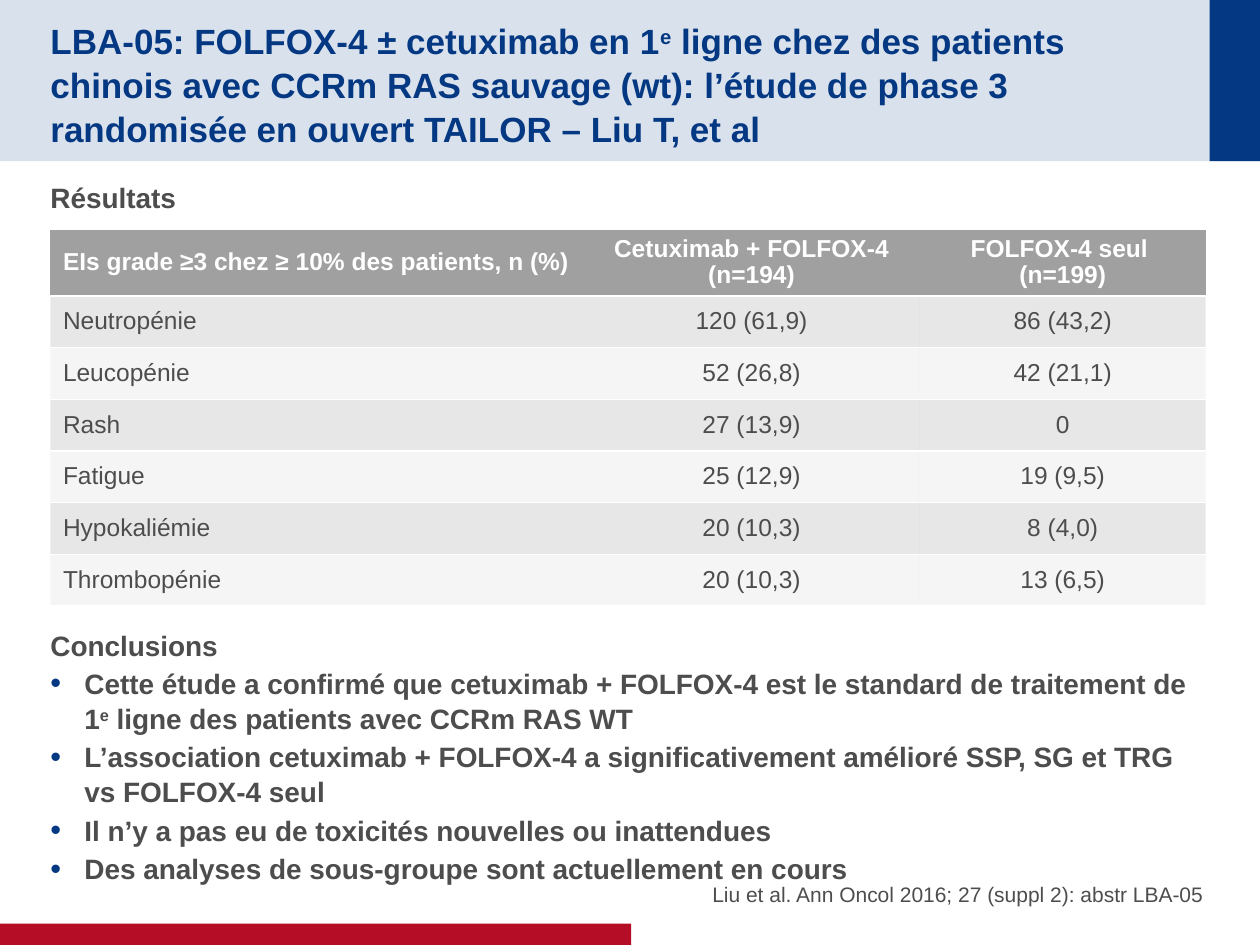
from lxml.etree import SubElement
from pptx import Presentation
from pptx.dml.color import RGBColor
from pptx.enum.shapes import MSO_SHAPE
from pptx.enum.text import MSO_ANCHOR, MSO_AUTO_SIZE, PP_ALIGN
from pptx.oxml import parse_xml
from pptx.oxml.ns import nsdecls, qn
from pptx.util import Inches, Pt

NAVY = RGBColor(0x04, 0x38, 0x82)
RED = RGBColor(0xB6, 0x0D, 0x27)
GREY = RGBColor(0x4D, 0x4D, 0x4D)
TABLE_GREY = RGBColor(0xA0, 0xA0, 0xA0)
WHITE = RGBColor(0xFF, 0xFF, 0xFF)

WIDTH, HEIGHT = 10, 7.5
MARGIN = 0.4
BAND_HEIGHT = 1.28
FOOT_HEIGHT = 0.17
INDENT = 0.27
COLUMNS = (4.23, 2.67, 2.27)
HEADER_HEIGHT, ROW_HEIGHT = 0.53, 0.41

TITLE = ("LBA-05: FOLFOX-4 ± cetuximab en 1", "e",
         " ligne chez des patients chinois avec CCRm RAS sauvage (wt): "
         "l’étude de phase 3 randomisée en ouvert TAILOR – Liu T, et al")
CONCLUSIONS = (
    ("Cette étude a confirmé que cetuximab + FOLFOX-4 est le standard de traitement de 1",
     "e", " ligne des patients avec CCRm RAS WT"),
    ("L’association cetuximab + FOLFOX-4 a significativement amélioré SSP, SG et TRG "
     "vs FOLFOX-4 seul",),
    ("Il n’y a pas eu de toxicités nouvelles ou inattendues",),
    ("Des analyses de sous-groupe sont actuellement en cours",),
)
CITATION = ("Liu et al. Ann Oncol 2016; 27 (suppl 2): abstr LBA-05 ",)
ADVERSE_EVENTS = (
    ("EIs grade ≥3 chez ≥ 10% des patients, n (%)",
     "Cetuximab + FOLFOX-4 (n=194)", "FOLFOX-4 seul \v(n=199)"),
    ("Neutropénie", "120 (61,9)", "86 (43,2)"),
    ("Leucopénie", "52 (26,8)", "42 (21,1)"),
    ("Rash", "27 (13,9)", "0"),
    ("Fatigue", "25 (12,9)", "19 (9,5)"),
    ("Hypokaliémie", "20 (10,3)", "8 (4,0)"),
    ("Thrombopénie", "20 (10,3)", "13 (6,5)"),
)


def apply(target, formats):
    """Set every attribute named in a dict of format values."""
    for name, value in formats.items():
        setattr(target, name, value)


def paint(fill, properties, color, opacity=100):
    """Fill with a solid colour at an opacity in percent."""
    fill.solid()
    fill.fore_color.rgb = color
    if opacity < 100:
        tint = properties.find(qn("a:solidFill"))[0]
        SubElement(tint, qn("a:alpha")).set("val", str(opacity * 1000))


def add_band(slide, left, top, width, height, color, opacity=100):
    """Add a plain rectangle behind the title."""
    band = slide.shapes.add_shape(MSO_SHAPE.RECTANGLE, *map(Inches, (left, top, width, height)))
    paint(band.fill, band._element.spPr, color, opacity)
    band.line.fill.background()
    band.shadow.inherit = False
    slide.shapes.title._element.addprevious(band._element)


def place(holder, bounds, anchor, top_inset=0, bottom_inset=0):
    """Move a placeholder and give back its prepared text frame."""
    apply(holder, dict(zip(("left", "top", "width", "height"), map(Inches, bounds))))
    frame = holder.text_frame
    apply(frame, {"word_wrap": True, "auto_size": MSO_AUTO_SIZE.NONE,
                  "vertical_anchor": anchor, "margin_left": 0, "margin_right": 0,
                  "margin_top": Inches(top_inset), "margin_bottom": Inches(bottom_inset)})
    return frame


def write(paragraph, parts, font, spacing):
    """Write text parts, every second one raised."""
    apply(paragraph, {"space_before": Pt(0), **spacing})
    color = font["color"]
    face = {name: value for name, value in font.items() if name != "color"}
    for index, part in enumerate(parts):
        if index % 2:
            run = paragraph.add_run()
            run.text = part
            run._r.get_or_add_rPr().set("baseline", "30000")
        else:
            for position, line in enumerate(part.split("\v")):
                if position:
                    paragraph.add_line_break()
                run = paragraph.add_run()
                run.text = line
    for run in paragraph.runs:
        apply(run.font, {"name": "Arial", **face})
        run.font.color.rgb = color


def set_bullet(paragraph, shown):
    """Show a navy bullet with a hanging indent, or none."""
    properties = paragraph._p.get_or_add_pPr()
    hang = Inches(INDENT) if shown else 0
    properties.set("marL", str(hang))
    properties.set("indent", str(-hang))
    if not shown:
        SubElement(properties, qn("a:buNone"))
        return
    SubElement(SubElement(properties, qn("a:buClr")), qn("a:srgbClr")).set("val", str(NAVY))
    SubElement(properties, qn("a:buSzPct")).set("val", "110000")
    SubElement(properties, qn("a:buFont")).set("typeface", "Arial")
    SubElement(properties, qn("a:buChar")).set("char", "•")


def set_borders(cell):
    """Rule a cell white above and below only."""
    white = f'<a:solidFill><a:srgbClr val="{WHITE}"/></a:solidFill>'
    sides = {"lnL": "<a:noFill/>", "lnR": "<a:noFill/>", "lnT": white, "lnB": white}
    for index, (side, stroke) in enumerate(sides.items()):
        line = parse_xml(f'<a:{side} {nsdecls("a")} w="{Pt(1)}">{stroke}</a:{side}>')
        cell._tc.get_or_add_tcPr().insert(index, line)


def add_events_table(slide):
    """Add the banded table of adverse events."""
    row_heights = [HEADER_HEIGHT] + [ROW_HEIGHT] * (len(ADVERSE_EVENTS) - 1)
    bounds = (MARGIN, 1.82, sum(COLUMNS), sum(row_heights))
    table = slide.shapes.add_table(len(ADVERSE_EVENTS), len(COLUMNS), *map(Inches, bounds)).table
    for column, width in zip(table.columns, COLUMNS):
        column.width = Inches(width)
    for row, height in zip(table.rows, row_heights):
        row.height = Inches(height)
    for row, values in enumerate(ADVERSE_EVENTS):
        header = row == 0
        opacity = 100 if header else 25 if row % 2 else 10
        font = {"size": Pt(14), "bold": header, "color": WHITE if header else GREY}
        for column, value in enumerate(values):
            cell = table.cell(row, column)
            cell.vertical_anchor = MSO_ANCHOR.MIDDLE
            paint(cell.fill, cell._tc.get_or_add_tcPr(), TABLE_GREY, opacity)
            set_borders(cell)
            write(cell.text_frame.paragraphs[0], (value,), font,
                  {"alignment": PP_ALIGN.CENTER if column else PP_ALIGN.LEFT,
                   "line_spacing": 0.96})


def write_findings(frame):
    """Write both headings and the bulleted conclusions around the table."""
    font = {"size": Pt(16), "bold": True, "color": GREY}
    entries = [(("Résultats",), 0, 4, False), (("Conclusions",), 232, 2, False)]
    entries += [(parts, 0, 2, True) for parts in CONCLUSIONS]
    for index, (parts, before, after, bulleted) in enumerate(entries):
        paragraph = frame.add_paragraph() if index else frame.paragraphs[0]
        write(paragraph, parts, font, {"space_before": Pt(before), "space_after": Pt(after),
                                       "line_spacing": 1.04})
        set_bullet(paragraph, bulleted)


def main():
    """Build the slide and save it."""
    deck = Presentation()
    apply(deck, {"slide_width": Inches(WIDTH), "slide_height": Inches(HEIGHT)})
    slide = deck.slides.add_slide(deck.slide_layouts.get_by_name("Two Content"))
    title, findings, citation = slide.placeholders

    add_band(slide, 0, 0, WIDTH, BAND_HEIGHT, NAVY, 15)
    add_band(slide, WIDTH - MARGIN, 0, MARGIN, BAND_HEIGHT, NAVY)
    add_band(slide, 0, HEIGHT - FOOT_HEIGHT, WIDTH / 2 + 0.01, FOOT_HEIGHT, RED)

    heading = place(title, (MARGIN, 0.2, 9.01, 0.88), MSO_ANCHOR.MIDDLE, 0.05)
    write(heading.paragraphs[0], TITLE, {"size": Pt(20), "bold": True, "color": NAVY},
          {"alignment": PP_ALIGN.LEFT, "line_spacing": 1.04})
    write_findings(place(findings, (MARGIN, 1.37, WIDTH - 2 * MARGIN, 5.19),
                         MSO_ANCHOR.TOP, 0.05, 0.05))
    source = place(citation, (5.08, 6.67, 4.52, 0.53), MSO_ANCHOR.BOTTOM).paragraphs[0]
    write(source, CITATION, {"size": Pt(12), "bold": False, "color": GREY},
          {"alignment": PP_ALIGN.RIGHT, "space_after": Pt(4)})
    set_bullet(source, False)
    add_events_table(slide)
    deck.save("out.pptx")


if __name__ == "__main__":
    main()
